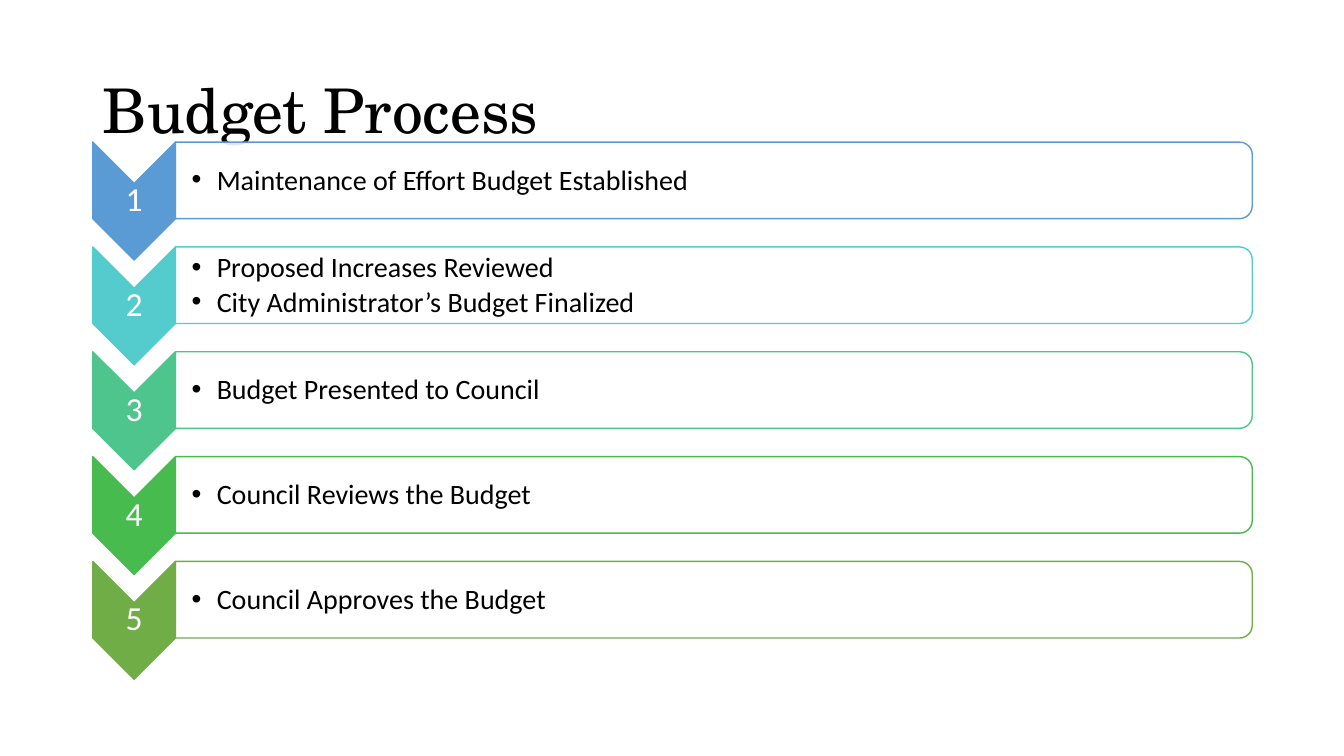
from pptx import Presentation
from pptx.util import Inches, Pt
from pptx.dml.color import RGBColor
from pptx.enum.shapes import MSO_SHAPE
from pptx.enum.text import PP_ALIGN, MSO_ANCHOR
from pptx.oxml.ns import qn
from lxml.etree import SubElement

HUES = {
    "blue": "5B9BD5", "aqua": "54CCCD", "mint": "4DC58D",
    "green": "48BB4F", "olive": "70AD47",
    "white": "FFFFFF", "black": "000000",
}
STEPS = [
    ("blue", ["Maintenance of Effort Budget Established"]),
    ("aqua", ["Proposed Increases Reviewed",
              "City Administrator’s Budget Finalized"]),
    ("mint", ["Budget Presented to Council"]),
    ("green", ["Council Reviews the Budget"]),
    ("olive", ["Council Approves the Budget"]),
]

# Grid: one row per step, an arrow column and a bar column
LEFT, SPLIT, RIGHT = 0.92, 1.74, 12.42
TOP, PITCH = 1.41, 1.04
TALL, BAR = 1.17, 0.76
WIDE, LONG = SPLIT - LEFT, RIGHT - SPLIT

deck = Presentation()
deck.slide_width, deck.slide_height = Inches(13.33), Inches(7.5)
slide = deck.slides.add_slide(deck.slide_layouts[6])


def turned(kind, mid_x, mid_y, long, short, fill, line):
    """Add a shape turned by 90 degrees around its centre."""
    shape = slide.shapes.add_shape(
        kind, Inches(mid_x - long / 2), Inches(mid_y - short / 2),
        Inches(long), Inches(short))
    shape.rotation = 90
    shape.shadow.inherit = False
    shape.fill.solid()
    shape.fill.fore_color.rgb = RGBColor.from_string(HUES[fill])
    shape.line.color.rgb = RGBColor.from_string(HUES[line])
    shape.line.width = Pt(1)
    return shape


def write(box, pads, lines, font, size, hue, align=PP_ALIGN.LEFT):
    """Add a text box with one paragraph per line."""
    frame = slide.shapes.add_textbox(*[Inches(n) for n in box]).text_frame
    frame.word_wrap = True
    frame.vertical_anchor = MSO_ANCHOR.MIDDLE
    (frame.margin_left, frame.margin_top,
     frame.margin_right, frame.margin_bottom) = [Inches(n) for n in pads]
    for i, line in enumerate(lines):
        para = frame.add_paragraph() if i else frame.paragraphs[0]
        para.alignment = align
        para.line_spacing = 0.9
        run = para.add_run()
        run.text = line
        run.font.name = font
        run.font.size = Pt(size)
        run.font.color.rgb = RGBColor.from_string(HUES[hue])
    return frame


# Title
write((LEFT, 0.4, 11.5, 1.45), (0.1, 0.05, 0.1, 0.05),
      ["Budget Process"], "TeX Gyre Schola", 44, "black")

# Steps
for i, (hue, lines) in enumerate(STEPS):
    top = TOP + i * PITCH

    # Numbered arrow
    mid = top + TALL / 2
    turned(MSO_SHAPE.CHEVRON, LEFT + WIDE / 2, mid, TALL, WIDE, hue, hue)
    write((LEFT, mid - 0.18, WIDE, 0.35), [0.02] * 4,
          [str(i + 1)], "Calibri", 24, "white", PP_ALIGN.CENTER)

    # Bar, slightly see-through
    mid = top + BAR / 2
    bar = turned(MSO_SHAPE.ROUND_2_SAME_RECTANGLE, SPLIT + LONG / 2, mid,
                 BAR, LONG, "white", hue)
    tint = bar.fill._xPr.find(qn("a:solidFill"))[0]
    SubElement(tint, qn("a:alpha")).set("val", "90000")

    # Bullets
    frame = write((SPLIT, mid - 0.34, LONG, 0.69), (0.16, 0.01, 0.01, 0.01),
                  lines, "Calibri", 20, "black")
    for para in frame.paragraphs:
        para.space_after = Pt(3)
        props = para._p.get_or_add_pPr()
        props.set("marL", str(Inches(0.25)))
        props.set("indent", str(-Inches(0.25)))
        SubElement(props, qn("a:buFont")).set("typeface", "Arial")
        SubElement(props, qn("a:buChar")).set("char", "•")

deck.save("out.pptx")
